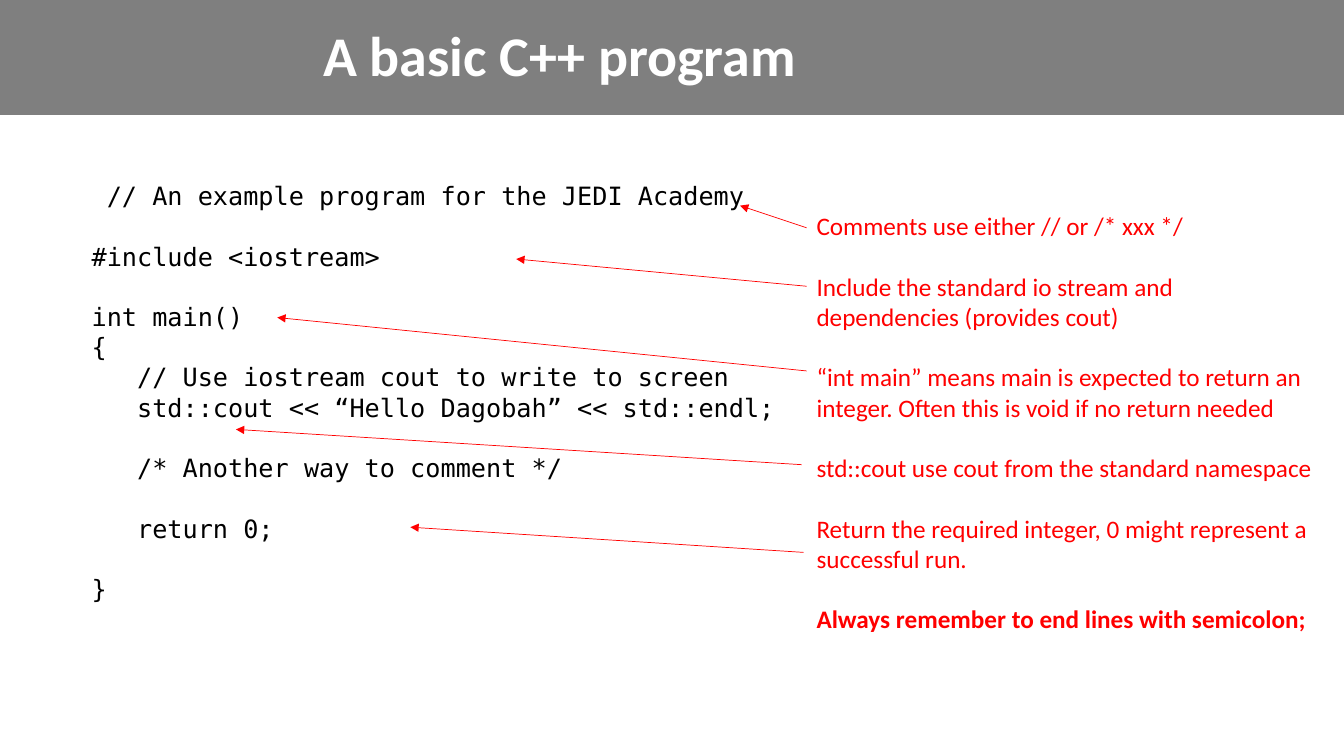
from dataclasses import dataclass

from lxml import etree
from pptx import Presentation
from pptx.dml.color import RGBColor
from pptx.enum import shapes, text
from pptx.oxml.ns import qn
from pptx.util import Inches, Pt


@dataclass(frozen=True)
class Theme:
    band: str = "7F7F7F"
    title: str = "FFFFFF"
    code: str = "000000"
    note: str = "FF0000"
    sans: str = "Calibri"
    mono: str = "DejaVu Sans Mono"
    title_size: float = 40
    body_size: float = 18
    line_pitch: float = 21.6
    arrow_width: float = 0.5


THEME = Theme()

# Each inner list is a block; blocks are set one line apart
CODE = [
    [" // An example program for the JEDI Academy"],
    ["#include <iostream>"],
    ["int main()",
     "{",
     "   // Use iostream cout to write to screen",
     "   std::cout << “Hello Dagobah” << std::endl;"],
    ["   /* Another way to comment */"],
    ["   return 0;"],
    ["}"],
]
NOTES = [
    ["Comments use either // or /* xxx */"],
    ["Include the standard io stream and dependencies (provides cout)"],
    ["“int main” means main is expected to return an integer. "
     "Often this is void if no return needed"],
    ["std::cout use cout from the standard namespace"],
    ["Return the required integer, 0 might represent a successful run."],
]
REMINDER = "Always remember to end lines with semicolon;"

# From each note to the code it explains
ARROWS = [
    ((8, 2.26), (7.34, 2.04)),
    ((8, 2.84), (5.12, 2.57)),
    ((8, 3.68), (2.75, 3.15)),
    ((7.95, 4.61), (2.34, 4.26)),
    ((7.97, 5.48), (4.07, 5.23)),
]


def add_band(s, height):
    band = s.shapes.add_shape(shapes.MSO_SHAPE.RECTANGLE, 0, 0,
                              Inches(13.33), Inches(height))
    band.shadow.inherit = False
    band.fill.solid()
    band.fill.fore_color.rgb = RGBColor.from_string(THEME.band)
    band.line.fill.background()


def add_box(s, left, top, width, height, anchor=text.MSO_ANCHOR.TOP):
    box = s.shapes.add_textbox(Inches(left), Inches(top),
                               Inches(width), Inches(height))
    tf = box.text_frame
    tf.word_wrap = True
    tf.vertical_anchor = anchor
    return tf


def write(tf, words, *, font, size, color, bold=False, align=None,
          spacing=None, before=0):
    """Add one formatted paragraph, using the first one while it is empty."""
    p = tf.paragraphs[0] if not tf.text else tf.add_paragraph()
    p.alignment = align
    p.line_spacing = spacing
    p.space_before = Pt(before)
    r = p.add_run()
    r.text = words
    r.font.name = font
    r.font.size = Pt(size)
    r.font.bold = bold
    r.font.color.rgb = RGBColor.from_string(color)


def write_blocks(tf, blocks, **style):
    for b, block in enumerate(blocks):
        for i, line in enumerate(block):
            gap = THEME.line_pitch if b and not i else 0
            write(tf, line, size=THEME.body_size,
                  spacing=Pt(THEME.line_pitch), before=gap, **style)


def add_arrow(s, start, end):
    arrow = s.shapes.add_connector(shapes.MSO_CONNECTOR.STRAIGHT,
                                   *map(Inches, start + end))
    arrow.line.color.rgb = RGBColor.from_string(THEME.note)
    arrow.line.width = Pt(THEME.arrow_width)
    etree.SubElement(arrow.line._get_or_add_ln(), qn("a:tailEnd"),
                     type="triangle")
    etree.SubElement(arrow._element.spPr, qn("a:effectLst"))


def main():
    prs = Presentation()
    prs.slide_width, prs.slide_height = Inches(13.33), Inches(7.5)
    s = prs.slides.add_slide(prs.slide_layouts[6])

    # Title band
    add_band(s, 1.14)
    title = add_box(s, 0.22, 0.12, 10.66, 0.91, text.MSO_ANCHOR.MIDDLE)
    write(title, "A basic C++ program", font=THEME.sans,
          size=THEME.title_size, color=THEME.title, bold=True,
          align=text.PP_ALIGN.CENTER, spacing=0.9)

    # Program listing
    code = add_box(s, 0.81, 1.74, 7.75, 4.34)
    write_blocks(code, CODE, font=THEME.mono, color=THEME.code)

    # Explanations
    notes = add_box(s, 8, 2.04, 5.15, 4.34)
    write_blocks(notes, NOTES, font=THEME.sans, color=THEME.note)
    write(notes, REMINDER, font=THEME.sans, size=THEME.body_size,
          color=THEME.note, bold=True, spacing=Pt(THEME.line_pitch),
          before=THEME.line_pitch)

    # Arrows from explanations to code
    for start, end in ARROWS:
        add_arrow(s, start, end)

    prs.save("out.pptx")


if __name__ == "__main__":
    main()
